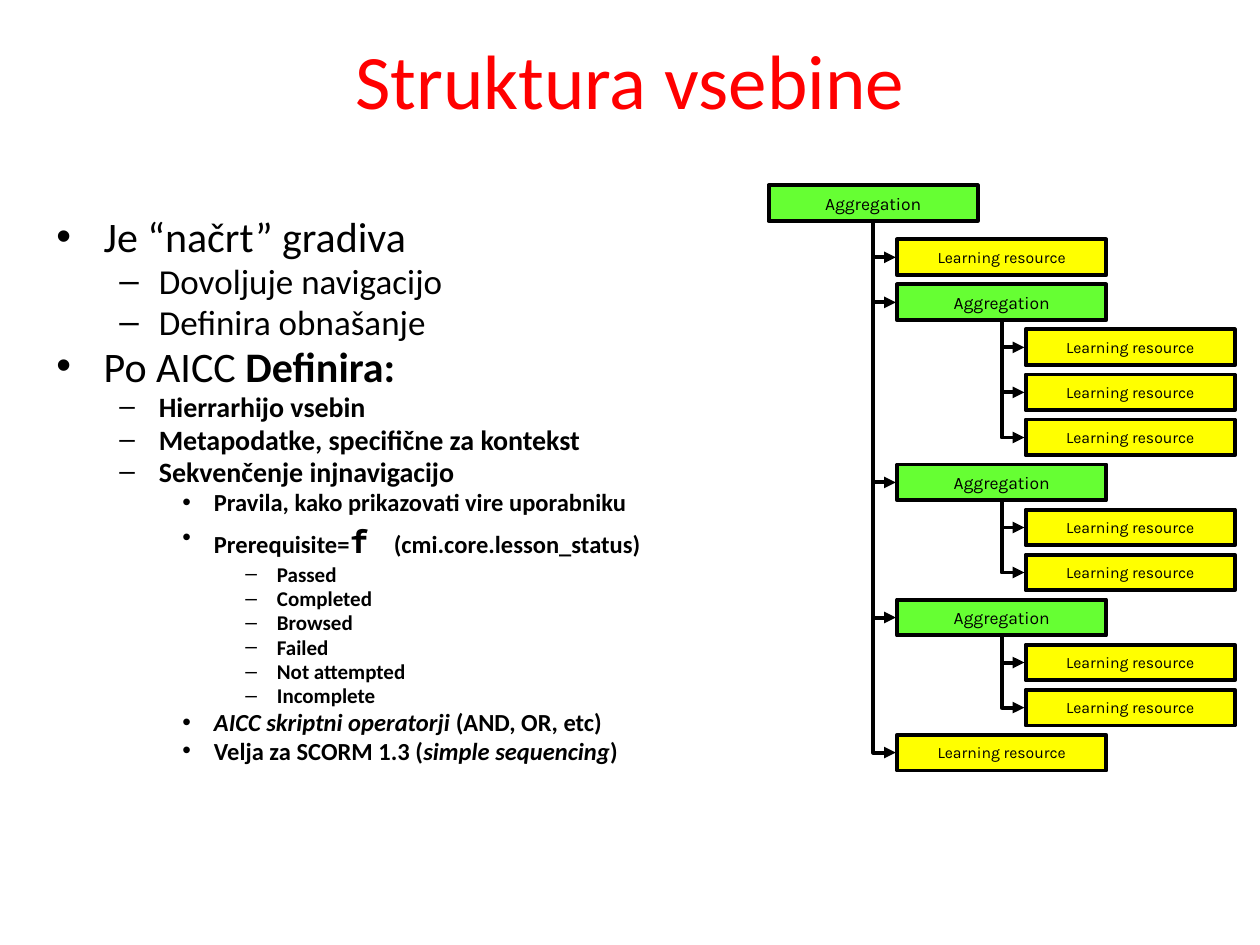
import lxml.etree
import pptx
import pptx.dml.color
import pptx.enum.shapes
import pptx.enum.text
import pptx.oxml.ns
import pptx.util

Pt = pptx.util.Pt
qn = pptx.oxml.ns.qn
Align = pptx.enum.text.PP_ALIGN
Anchor = pptx.enum.text.MSO_ANCHOR
RGBColor = pptx.dml.color.RGBColor

BLACK = RGBColor(0x00, 0x00, 0x00)
RED = RGBColor(0xFF, 0x00, 0x00)
GREEN = RGBColor(0x66, 0xFF, 0x33)
YELLOW = RGBColor(0xFF, 0xFF, 0x00)

BOLD = {"bold": True}
ITALIC = {"bold": True, "italic": True}
LEVELS = [("•", 27, -27), ("–", 58.5, -22.5), ("•", 90, -18), ("–", 126, -18)]

OUTLINE = [
    (0, 24, [("Je “načrt” gradiva", {})]),
    (1, 20, [("Dovoljuje navigacijo", {})]),
    (1, 20, [("Definira obnašanje", {})]),
    (0, 24, [("Po AICC ", {}), ("Definira:", BOLD)]),
    (1, 16, [("Hierrarhijo vsebin", BOLD)]),
    (1, 16, [("Metapodatke, specifične za kontekst", BOLD)]),
    (1, 16, [("Sekvenčenje injnavigacijo", BOLD)]),
    (2, 14, [("Pravila, kako prikazovati vire uporabniku", BOLD)]),
    (2, 14, [("Prerequisite=", BOLD),
             ("f", {"bold": True, "size": Pt(18), "name": "Noto Sans Mono"}),
             (" ", {"bold": True, "size": Pt(24), "name": "Noto Sans Mono"}),
             ("(cmi.core.lesson_status)", BOLD)]),
    *[(3, 12, [(status, BOLD)]) for status in
      ("Passed", "Completed", "Browsed", "Failed", "Not attempted", "Incomplete")],
    (2, 14, [("AICC skriptni operatorji", ITALIC), (" (AND, OR, etc)", BOLD)]),
    (2, 14, [("Velja za SCORM 1.3 (", BOLD), ("simple sequencing", ITALIC), (")", BOLD)]),
]

RESOURCE = ("Learning resource", YELLOW, 9)
AGGREGATION = ("Aggregation", GREEN, 10)
TREE = [(0, AGGREGATION), (1, RESOURCE),
        (1, AGGREGATION), (2, RESOURCE), (2, RESOURCE), (2, RESOURCE),
        (1, AGGREGATION), (2, RESOURCE), (2, RESOURCE),
        (1, AGGREGATION), (2, RESOURCE), (2, RESOURCE),
        (1, RESOURCE)]
TREE_LEFT, TREE_TOP, FIRST_ROW_TOP = 439.2, 105.8, 136.8
INDENT, ROW_PITCH = 73.44, 25.73
BOX_WIDTH, BOX_HEIGHT = 119.5, 20.5


class ContentSlide:
    text_font = "Calibri"
    box_font = "Karla"
    line_width = 2.25

    def __init__(self, slide):
        self.shapes = slide.shapes

    def add_words(self, paragraph, text, color=BLACK, **values):
        run = paragraph.add_run()
        run.text = text
        run.font.color.rgb = color
        for attribute, value in values.items():
            setattr(run.font, attribute, value)

    def text_area(self, left, top, width, height):
        frame = self.shapes.add_textbox(Pt(left), Pt(top), Pt(width), Pt(height)).text_frame
        frame.word_wrap = True
        return frame

    def title(self, text, *place):
        frame = self.text_area(*place)
        frame.vertical_anchor = Anchor.MIDDLE
        heading = frame.paragraphs[0]
        heading.alignment = Align.CENTER
        self.add_words(heading, text, RED, size=Pt(44), name=self.text_font)

    def outline(self, entries, *place):
        frame = self.text_area(*place)
        for index, (level, size, pieces) in enumerate(entries):
            entry = frame.add_paragraph() if index else frame.paragraphs[0]
            entry.level = level
            entry.line_spacing = 0.8
            entry.space_before = Pt(size * 0.2)
            self.bullet(entry, *LEVELS[level])
            for text, style in pieces:
                self.add_words(entry, text, **{"size": Pt(size), "name": self.text_font, **style})

    def bullet(self, paragraph, character, margin, hanging):
        properties = paragraph._p.get_or_add_pPr()
        properties.set("marL", str(Pt(margin)))
        properties.set("indent", str(Pt(hanging)))
        lxml.etree.SubElement(properties, qn("a:buFont")).set("typeface", "Arial")
        lxml.etree.SubElement(properties, qn("a:buChar")).set("char", character)

    def node(self, label, fill, size, left, top):
        box = self.shapes.add_shape(pptx.enum.shapes.MSO_SHAPE.RECTANGLE,
                                    Pt(left), Pt(top), Pt(BOX_WIDTH), Pt(BOX_HEIGHT))
        box.shadow.inherit = False
        box.fill.solid()
        box.fill.fore_color.rgb = fill
        box.line.color.rgb = BLACK
        box.line.width = Pt(self.line_width)
        box.text_frame.word_wrap = False
        box.text_frame.vertical_anchor = Anchor.MIDDLE
        caption = box.text_frame.paragraphs[0]
        caption.alignment = Align.CENTER
        self.add_words(caption, label, size=Pt(size), name=self.box_font)

    def branch(self, x1, y1, x2, y2):
        middle_x, middle_y = (x1 + x2) / 2, (y1 + y2) / 2
        half_run, half_drop = (x2 - x1) / 2, (y2 - y1) / 2
        arrow = self.shapes.add_connector(
            pptx.enum.shapes.MSO_CONNECTOR.ELBOW,
            Pt(middle_x + half_drop), Pt(middle_y - half_run),
            Pt(middle_x - half_drop), Pt(middle_y + half_run))
        arrow.line.color.rgb = BLACK
        arrow.line.width = Pt(self.line_width)
        properties = arrow._element.spPr
        properties.find(qn("a:xfrm")).set("rot", "16200000")
        properties.find(qn("a:prstGeom")).set("prst", "bentConnector2")
        line = properties.find(qn("a:ln"))
        lxml.etree.SubElement(line, qn("a:tailEnd")).set("type", "triangle")
        lxml.etree.SubElement(properties, qn("a:effectLst"))

    def tree(self, nodes):
        branches, parents = [], {}
        for row, (depth, kind) in enumerate(nodes):
            left = TREE_LEFT + depth * INDENT
            top = FIRST_ROW_TOP + (row - 1) * ROW_PITCH if row else TREE_TOP
            self.node(*kind, left, top)
            parents[depth] = (left + BOX_WIDTH / 2, top + BOX_HEIGHT + 0.7)
            if depth:
                branches.append((*parents[depth - 1], left - 0.7, top + BOX_HEIGHT / 2))
        for ends in branches:
            self.branch(*ends)


def main():
    presentation = pptx.Presentation()
    presentation.slide_width = Pt(720)
    presentation.slide_height = Pt(540)
    content = ContentSlide(presentation.slides.add_slide(presentation.slide_layouts[6]))
    content.title("Struktura vsebine", 36, 0, 648, 90)
    content.outline(OUTLINE, 25.2, 122.4, 648, 356.4)
    content.tree(TREE)
    presentation.save("out.pptx")


if __name__ == "__main__":
    main()
